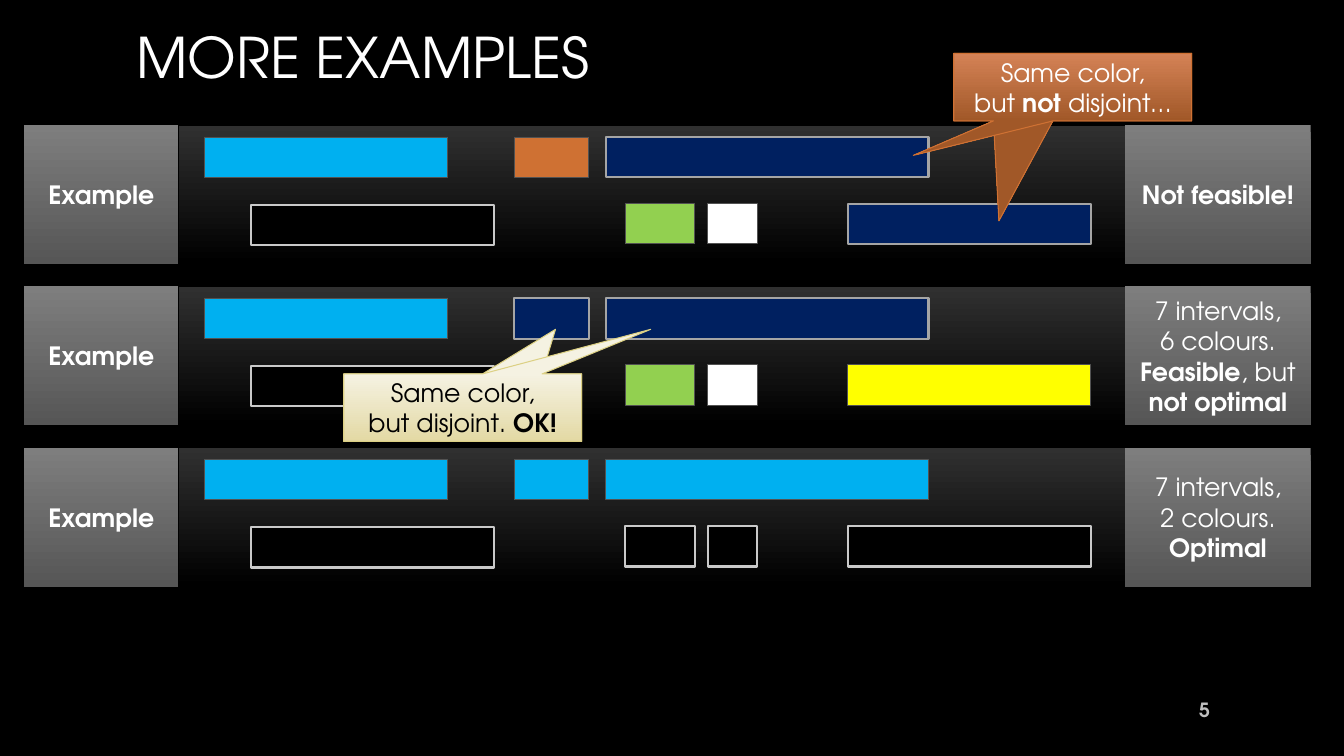
from pptx import Presentation
from pptx import util as u
from pptx.dml.color import RGBColor
from pptx.enum import shapes, text

RECT = shapes.MSO_SHAPE.RECTANGLE
BAR = shapes.MSO_SHAPE.FLOWCHART_PROCESS
CALLOUT = shapes.MSO_SHAPE.RECTANGULAR_CALLOUT
ALIGN = text.PP_ALIGN

SKY, NAVY, ORANGE, GREEN = "00B0F0", "002060", "CF7133", "92D050"
WHITE, YELLOW, BLACK = "FFFFFF", "FFFF00", "000000"
OUTLINES = {NAVY: ("A5A5A5", 1.5), BLACK: ("C9C9C9", 1.5)}
THIN_EDGE = ("525252", 0.75)

UPPER, LOWER = 0.12, 0.78
INTERVALS = [(2.03, UPPER, 2.41), (5.1, UPPER, 0.74), (6.01, UPPER, 3.2),
             (6.2, LOWER, 0.69), (7.02, LOWER, 0.49), (8.41, LOWER, 2.41),
             (2.49, LOWER + 0.01, 2.41)]
EXAMPLES = [
    ([SKY, ORANGE, NAVY, GREEN, WHITE, NAVY, BLACK], "*Not feasible!*"),
    ([SKY, NAVY, NAVY, GREEN, WHITE, YELLOW, BLACK],
     "7 intervals,\v6 colours.\n*Feasible*, but\v*not optimal*"),
    ([SKY, SKY, SKY, BLACK, BLACK, BLACK, BLACK],
     "7 intervals,\v2 colours.\n*Optimal*"),
]
FIRST_TOP, ROW_PITCH, ROW_HEIGHT, BAR_HEIGHT = 1.24, 1.6, 1.38, 0.4


def rgb(value):
    return RGBColor.from_string(value)


class ExampleSlide:
    """Draws styled elements on one slide."""

    font = "TeX Gyre Adventor"

    def __init__(self, deck):
        self.page = deck.slides.add_slide(deck.slide_layouts[5])
        self.page.background.fill.solid()
        self.page.background.fill.fore_color.rgb = rgb(BLACK)

    def fill_text(self, box, content, size=18, color=WHITE, align=ALIGN.CENTER):
        frame = box.text_frame
        frame.word_wrap = True
        frame.vertical_anchor = text.MSO_ANCHOR.MIDDLE
        for index, line in enumerate(content.split("\n")):
            para = frame.add_paragraph() if index else frame.paragraphs[0]
            para.alignment = align
            para.font.name, para.font.size = self.font, u.Pt(size)
            para.font.color.rgb = rgb(color)
            for part, words in enumerate(line.split("*")):
                for piece, run_text in enumerate(words.split("\v")):
                    if piece:
                        para.add_line_break()
                    if run_text:
                        span = para.add_run()
                        span.text = run_text
                        span.font.bold = part % 2 == 1

    def title(self, content):
        box = self.page.shapes.title
        box.left, box.top = u.Inches(1.25), u.Inches(0)
        box.width, box.height = u.Inches(10.83), u.Inches(1.12)
        self.fill_text(box, content, 40, align=ALIGN.LEFT)

    def label(self, at, content, size, color, align):
        box = self.page.shapes.add_textbox(*map(u.Inches, at))
        self.fill_text(box, content, size, color, align)

    def shape(self, kind, at, fill, line=None):
        box = self.page.shapes.add_shape(kind, *map(u.Inches, at))
        box.shadow.inherit = False
        if isinstance(fill, tuple):
            box.fill.gradient()
            box.fill.gradient_angle = 270
            for stop, color, position in zip(box.fill.gradient_stops, fill, (0, 1)):
                stop.color.rgb, stop.position = rgb(color), position
        else:
            box.fill.solid()
            box.fill.fore_color.rgb = rgb(fill)
        if line:
            box.line.color.rgb, box.line.width = rgb(line[0]), u.Pt(line[1])
        else:
            box.line.fill.background()
        return box

    def panel(self, at, content):
        self.fill_text(self.shape(RECT, at, ("7E7E7E", "565656")), content)

    def callout(self, at, tips, fill, line, content, color):
        for tip in tips:
            box = self.shape(CALLOUT, at, fill, (line, 0.75))
            box.adjustments[0], box.adjustments[1] = tip
        self.fill_text(box, content, color=color)

    def example(self, top, colors, verdict):
        self.shape(RECT, (1.77, top, 9.4, ROW_HEIGHT), ("303030", BLACK), (BLACK, 0.75))
        for (left, offset, width), color in zip(INTERVALS, colors):
            self.shape(BAR, (left, top + offset, width, BAR_HEIGHT), color,
                       OUTLINES.get(color, THIN_EDGE))
        self.panel((0.24, top, 1.53, ROW_HEIGHT), "*Example*")
        self.panel((11.16, top, 1.84, ROW_HEIGHT), verdict)


def main():
    deck = Presentation()
    deck.slide_width, deck.slide_height = u.Inches(13.33), u.Inches(7.5)
    slide = ExampleSlide(deck)
    slide.title("MORE EXAMPLES")
    for row, (colors, verdict) in enumerate(EXAMPLES):
        slide.example(FIRST_TOP + row * ROW_PITCH, colors, verdict)
    slide.callout((9.46, 0.53, 2.36, 0.67), [(-0.31, 1.98), (-0.67, 1.01)],
                  ("D48256", "A15828"), ORANGE,
                  "Same color,\vbut *not *disjoint…", WHITE)
    slide.callout((3.41, 3.71, 2.36, 0.67), [(0.39, -1.16), (0.79, -1.16)],
                  ("F5F2E2", "E3D9A4"), "DCD084",
                  "Same color,\vbut disjoint. *OK!*", BLACK)
    slide.label((11.5, 6.84, 0.6, 0.4), "*5*", 14, "BFBFBF", ALIGN.RIGHT)
    deck.save("out.pptx")


if __name__ == "__main__":
    main()
